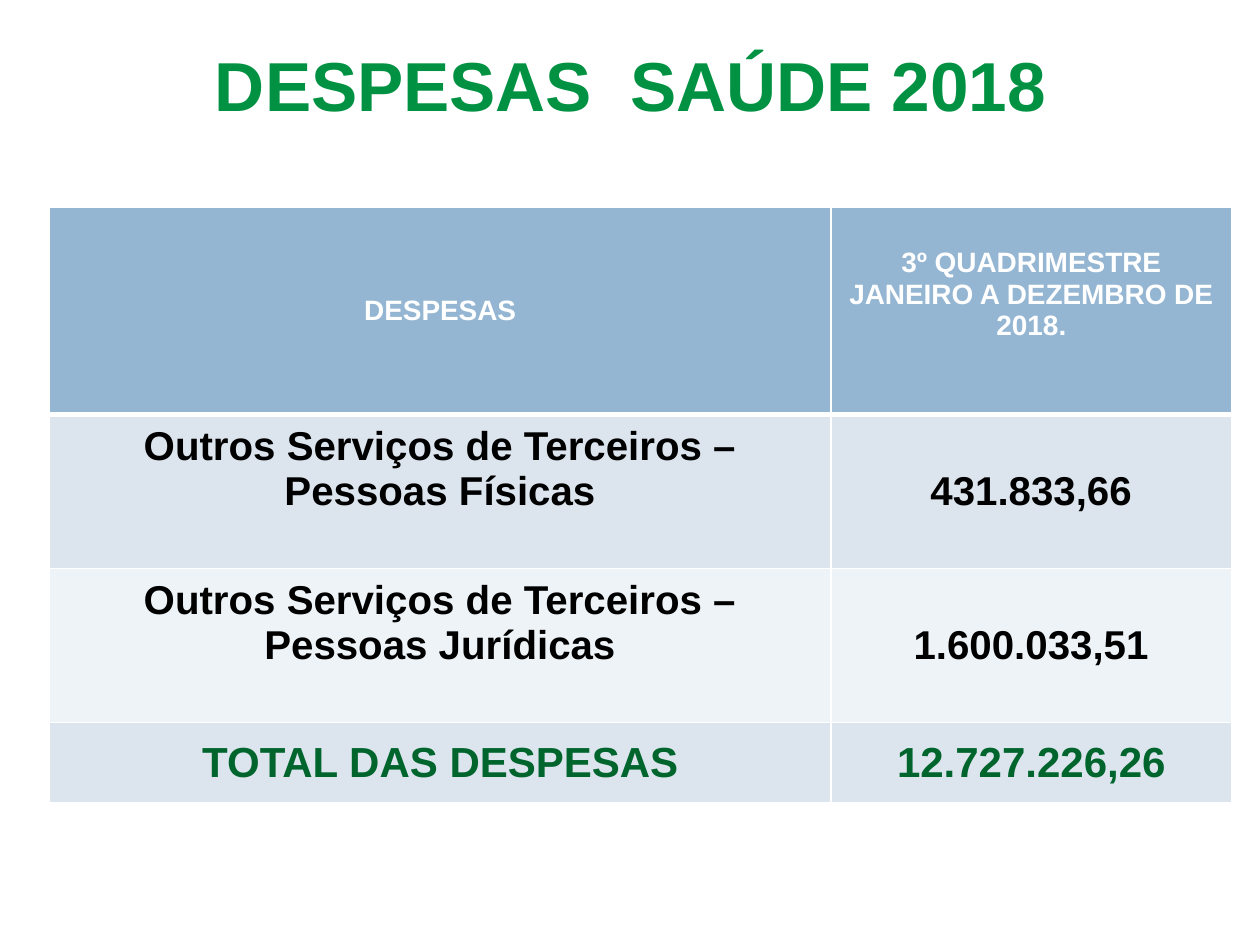
from dataclasses import dataclass

from lxml.etree import SubElement
from pptx import Presentation
from pptx.dml.color import RGBColor
from pptx.enum.text import MSO_ANCHOR, PP_ALIGN
from pptx.oxml.ns import qn
from pptx.slide import Slide
from pptx.table import _Cell
from pptx.text.text import TextFrame
from pptx.util import Cm, Pt


@dataclass(frozen=True)
class Theme:
    font: str = "Arial"
    title: str = "009242"
    head: str = "94B6D2"
    band: str = "DCE5EE"
    light: str = "EEF3F7"
    white: str = "FFFFFF"
    ink: str = "000000"
    total: str = "00642D"
    title_size: float = 39.6
    head_size: float = 16
    body_size: float = 23
    total_size: float = 24


@dataclass(frozen=True)
class Row:
    cells: tuple[str, str]
    height: float
    fill: str
    color: str
    size: float
    lifts: tuple[float, float] = (0, 0)
    rule: float = 1


THEME = Theme()
PAD = 0.13
WIDTHS = (15.75, 8.08)
ROWS = (
    Row(("DESPESAS", "3º QUADRIMESTRE\nJANEIRO A DEZEMBRO DE 2018."), 4.18,
        THEME.head, THEME.white, THEME.head_size, (0, 0.65), 3),
    Row(("Outros Serviços de Terceiros – Pessoas Físicas", "431.833,66"), 2.99,
        THEME.band, THEME.ink, THEME.body_size, (0.9, 0)),
    Row(("Outros Serviços de Terceiros – Pessoas Jurídicas", "1.600.033,51"), 2.99,
        THEME.light, THEME.ink, THEME.body_size, (0.9, 0)),
    Row(("TOTAL DAS DESPESAS", "12.727.226,26"), 1.62,
        THEME.band, THEME.total, THEME.total_size),
)


def write(frame: TextFrame, text: str, size: float, color: str) -> None:
    """Fill a frame with bold centred paragraphs."""
    frame.text = text
    frame.word_wrap = True
    for para in frame.paragraphs:
        para.alignment = PP_ALIGN.CENTER
        font = para.font
        font.name, font.size, font.bold = THEME.font, Pt(size), True
        font.color.rgb = RGBColor.from_string(color)


def edge(cell: _Cell, side: str, width: float) -> None:
    """Draw one white border of a cell."""
    line = SubElement(cell._tc.get_or_add_tcPr(), qn(f"a:ln{side}"), w=str(Pt(width)))
    fill = SubElement(line, qn("a:solidFill"))
    SubElement(fill, qn("a:srgbClr"), val=THEME.white)


def add_title(slide: Slide, text: str) -> None:
    """Add the slide heading."""
    frame = slide.shapes.add_textbox(Cm(1.19), Cm(0.79), Cm(23.06), Cm(1.8)).text_frame
    write(frame, text, THEME.title_size, THEME.title)
    frame.vertical_anchor = MSO_ANCHOR.MIDDLE


def add_grid(slide: Slide, rows: tuple[Row, ...]) -> None:
    """Add the table of expenses."""
    high = sum(row.height for row in rows)
    table = slide.shapes.add_table(
        len(rows), len(WIDTHS), Cm(1), Cm(4.17), Cm(sum(WIDTHS)), Cm(high)).table
    for col, width in zip(table.columns, WIDTHS):
        col.width = Cm(width)
    above = 1
    for line, row in zip(table.rows, rows):
        line.height = Cm(row.height)
        for cell, text, lift in zip(line.cells, row.cells, row.lifts):
            write(cell.text_frame, text, row.size, row.color)
            cell.vertical_anchor = MSO_ANCHOR.MIDDLE
            cell.margin_top, cell.margin_bottom = Cm(PAD), Cm(PAD + lift)
            for side, width in zip("LRTB", (1, 1, above, row.rule)):
                edge(cell, side, width)
            cell.fill.solid()
            cell.fill.fore_color.rgb = RGBColor.from_string(row.fill)
        above = row.rule


def main() -> None:
    """Build and save the slide."""
    deck = Presentation()
    deck.slide_width, deck.slide_height = Cm(25.4), Cm(19.05)
    slide = deck.slides.add_slide(deck.slide_layouts[6])
    add_title(slide, "DESPESAS  SAÚDE 2018")
    add_grid(slide, ROWS)
    deck.save("out.pptx")


if __name__ == "__main__":
    main()
